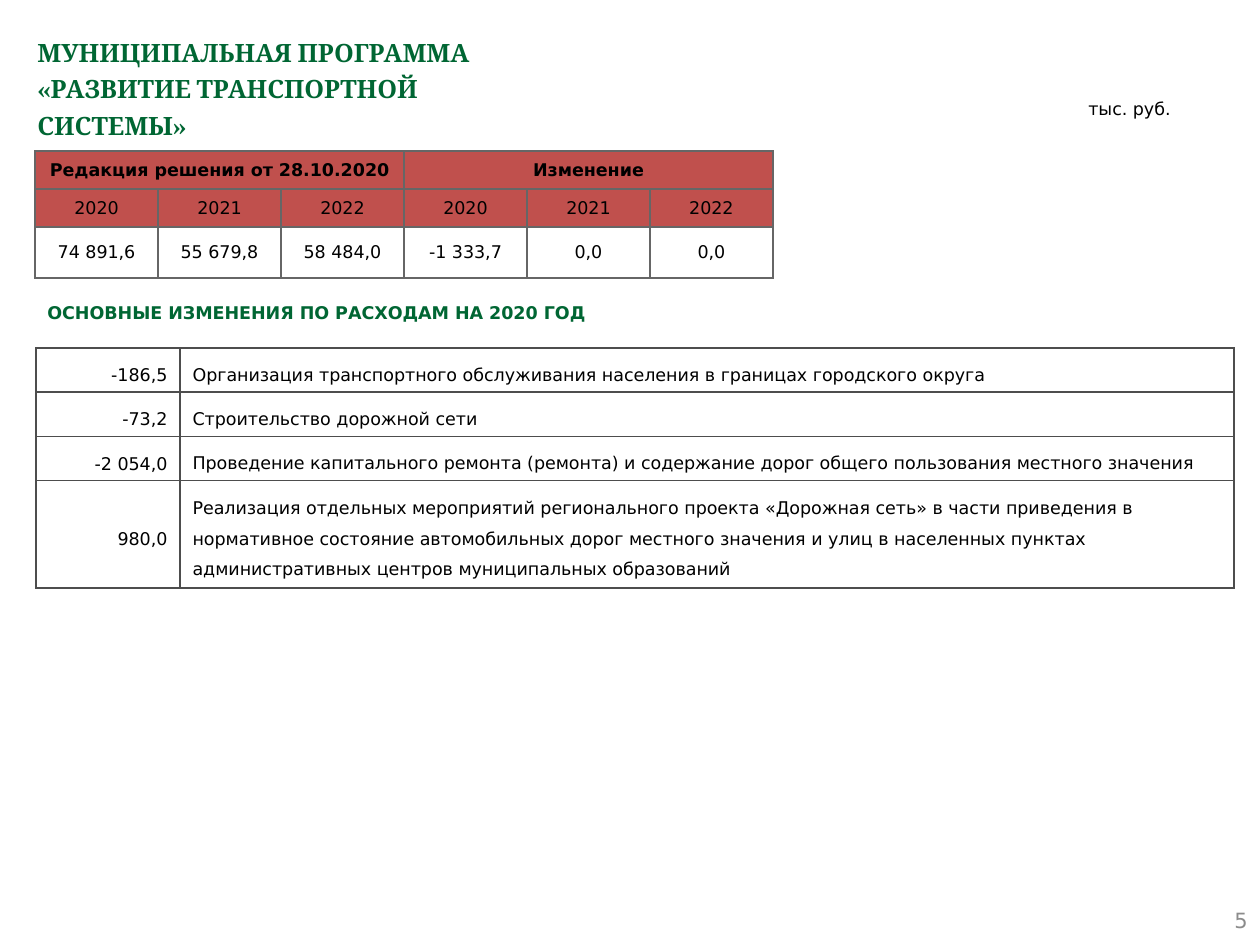
from lxml import etree
from pptx import Presentation
from pptx import util as u
from pptx.dml.color import RGBColor
from pptx.enum import shapes, text
from pptx.oxml import ns

SCALE = 914400 / 126
GREEN = RGBColor(0x00, 0x66, 0x33)
RED = RGBColor(0xC0, 0x50, 0x4D)
BLACK = RGBColor(0, 0, 0)
GRAY = RGBColor(0x8C, 0x8C, 0x8C)
LEFT, RIGHT, CENTER = (text.PP_ALIGN.LEFT, text.PP_ALIGN.RIGHT,
                       text.PP_ALIGN.CENTER)
TOP, MIDDLE, BOTTOM = (text.MSO_ANCHOR.TOP, text.MSO_ANCHOR.MIDDLE,
                       text.MSO_ANCHOR.BOTTOM)


def px(n):
    return u.Emu(round(n * SCALE))


class Page:
    font = "DejaVu Sans"

    def __init__(self, deck):
        self.slide = deck.slides.add_slide(deck.slide_layouts[6])

    def style(self, frame, size=10, color=BLACK, bold=False, align=LEFT,
              gap=1.0, font=None):
        for para in frame.paragraphs:
            para.alignment = align
            para.line_spacing = gap
            for run in para.runs:
                run.font.name = font or self.font
                run.font.size = u.Pt(size)
                run.font.bold = bold
                run.font.color.rgb = color

    def label(self, box, words, anchor=TOP, **look):
        shape = self.slide.shapes.add_textbox(*map(px, box))
        frame = shape.text_frame
        frame.word_wrap = True
        frame.vertical_anchor = anchor
        frame.text = words
        self.style(frame, **look)

    def banner(self, box, words, **look):
        shape = self.slide.shapes.add_shape(
            shapes.MSO_SHAPE.PENTAGON, *map(px, box))
        shape.adjustments[0] = 0
        shape.shadow.inherit = False
        shape.fill.background()
        shape.line.fill.background()
        frame = shape.text_frame
        frame.vertical_anchor = MIDDLE
        frame.text = words
        self.style(frame, **look)

    def grid(self, left, top, cols, rows):
        table = self.slide.shapes.add_table(
            len(rows), len(cols), px(left), px(top),
            px(sum(cols)), px(sum(rows))).table
        table.first_row = table.horz_banding = False
        for col, wide in zip(table.columns, cols):
            col.width = px(wide)
        for row, high in zip(table.rows, rows):
            row.height = px(high)
        return table

    def cell(self, cell, words, edge, fill=None, anchor=MIDDLE, pad=None,
             **look):
        cell.text = words
        cell.vertical_anchor = anchor
        if pad:
            cell.margin_left = cell.margin_right = px(pad)
            cell.margin_top = cell.margin_bottom = px(pad)
        self.style(cell.text_frame, **look)
        if fill:
            cell.fill.solid()
            cell.fill.fore_color.rgb = fill
        else:
            cell.fill.background()
        self.border(cell, edge)

    def border(self, cell, edge):
        props = cell._tc.get_or_add_tcPr()
        for spot, side in enumerate(("a:lnL", "a:lnR", "a:lnT", "a:lnB")):
            line = etree.Element(ns.qn(side), w=str(u.Pt(1)))
            solid = etree.SubElement(line, ns.qn("a:solidFill"))
            etree.SubElement(solid, ns.qn("a:srgbClr"), val=edge)
            props.insert(spot, line)


def main():
    deck = Presentation()
    deck.slide_width, deck.slide_height = px(1260), px(945)
    page = Page(deck)

    # Title, unit and page number
    page.label((25, 25, 1211, 100),
               "МУНИЦИПАЛЬНАЯ ПРОГРАММА\v«РАЗВИТИЕ ТРАНСПОРТНОЙ\vСИСТЕМЫ»",
               size=14.4, color=GREEN, bold=True, gap=1.2, font="Cambria")
    page.label((1076, 88, 127, 38), "тыс. руб.", gap=1.2)
    page.label((966, 895, 294, 50), "5", anchor=MIDDLE, size=12,
               color=GRAY, align=RIGHT)

    # Budget by year
    years = ["2020", "2021", "2022"]
    heads = ["Редакция решения от 28.10.2020", "Изменение"]
    sums = ["74 891,6", "55 679,8", "58 484,0", "-1 333,7", "0,0", "0,0"]
    top = [heads[0], "", "", heads[1], "", ""]
    budget = page.grid(35, 151, [123] * 6, [38, 38, 51])
    for r, line in enumerate((top, years * 2, sums)):
        for c, words in enumerate(line):
            page.cell(budget.cell(r, c), words, "666666",
                      fill=RED if r < 2 else None, pad=6,
                      bold=r == 0, align=CENTER)
    for c in (0, 3):
        budget.cell(0, c).merge(budget.cell(0, c + 2))

    # Main changes
    page.banner((35, 285, 670, 54),
                "ОСНОВНЫЕ ИЗМЕНЕНИЯ ПО РАСХОДАМ НА 2020 ГОД",
                color=GREEN, bold=True)
    items = [
        ("-186,5", "Организация транспортного обслуживания населения "
                   "в границах городского округа"),
        ("-73,2", "Строительство дорожной сети"),
        ("-2 054,0", "Проведение капитального ремонта (ремонта) и содержание "
                     "дорог общего пользования местного значения"),
        ("980,0", "Реализация отдельных мероприятий регионального проекта "
                  "«Дорожная сеть» в части приведения в нормативное состояние "
                  "автомобильных дорог местного значения и улиц в населенных "
                  "пунктах административных центров муниципальных "
                  "образований"),
    ]
    costs = page.grid(36, 348, [144, 1054], [43, 43, 43, 104])
    for r, (cost, work) in enumerate(items):
        page.cell(costs.cell(r, 0), cost, "4D4D4D", align=RIGHT, gap=1.5,
                  anchor=BOTTOM if r < 3 else MIDDLE)
        page.cell(costs.cell(r, 1), work, "4D4D4D", gap=1.5)

    deck.save("out.pptx")


if __name__ == "__main__":
    main()
